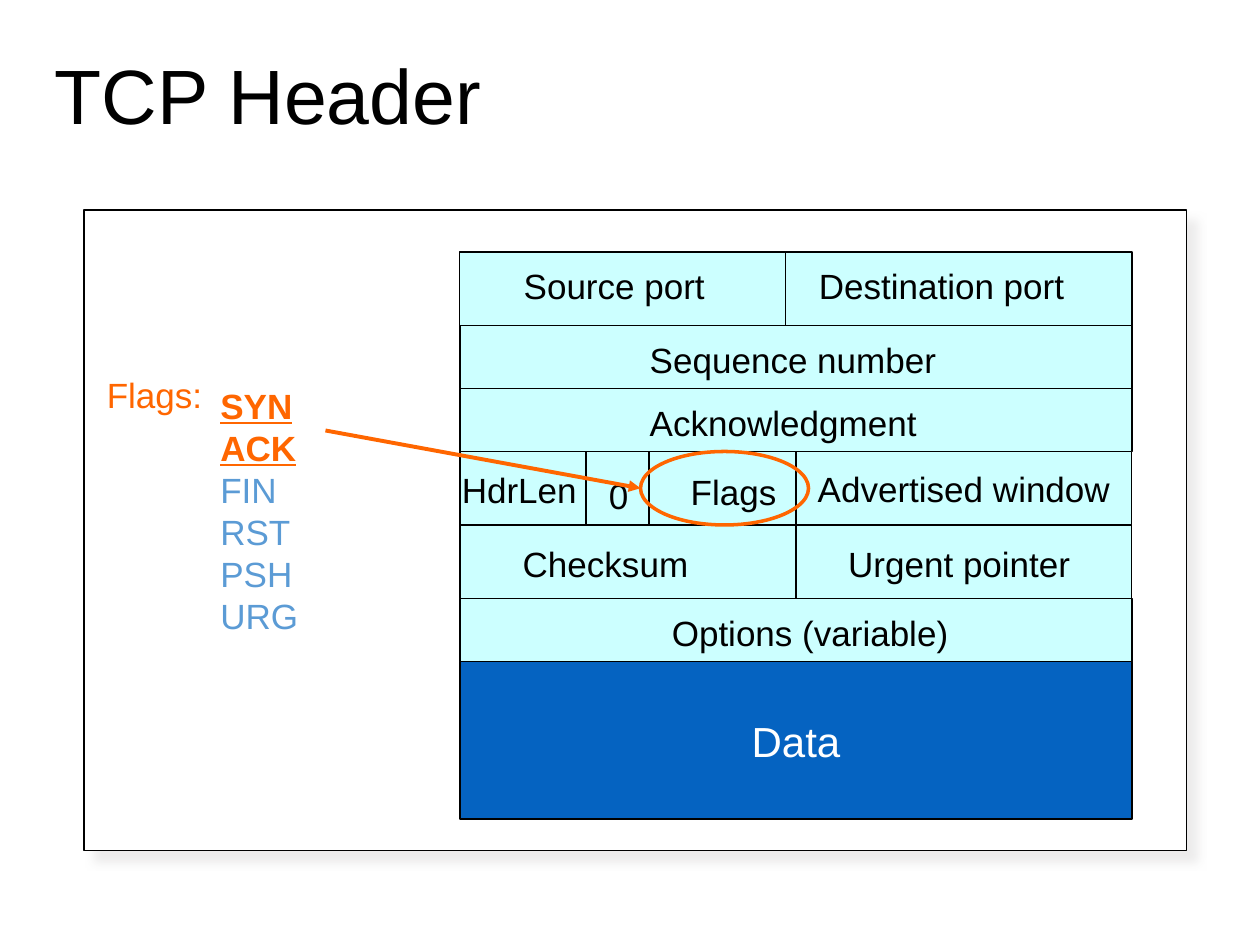
from dataclasses import dataclass
from typing import Optional

from lxml.etree import SubElement
from pptx import Presentation
from pptx.dml.color import RGBColor
from pptx.enum.shapes import MSO_CONNECTOR as Conn, MSO_SHAPE as Geo
from pptx.enum.text import MSO_ANCHOR as Anchor, MSO_AUTO_SIZE as AutoSize, PP_ALIGN as Align
from pptx.oxml.ns import qn
from pptx.util import Emu, Pt

PX = 7620  # EMU per px, 120 px to the inch
BLACK = RGBColor(0x00, 0x00, 0x00)
WHITE = RGBColor(0xFF, 0xFF, 0xFF)
CYAN = RGBColor(0xCC, 0xFF, 0xFF)
BLUE = RGBColor(0x05, 0x63, 0xC1)
ORANGE = RGBColor(0xFF, 0x66, 0x00)
LIGHT_BLUE = RGBColor(0x5B, 0x9B, 0xD5)

LEFT, TOP, LABEL_H = 438, 240, 52


@dataclass(frozen=True)
class Row:
    height: int
    widths: tuple[int, ...] = (640,)
    fill: RGBColor = CYAN


@dataclass(frozen=True)
class Label:
    text: str
    x: int
    y: int
    w: int
    fill: Optional[RGBColor] = CYAN
    color: RGBColor = BLACK


@dataclass(frozen=True)
class Flag:
    name: str
    key: bool = False


ROWS = (
    Row(70, (310, 330)),
    Row(60),
    Row(60),
    Row(70, (320, 320)),
    Row(70, (320, 320)),
    Row(60),
    Row(150, fill=BLUE),
)
LABELS = (
    Label("Source port", 487, 246, 197),
    Label("Destination port", 768, 246, 258),
    Label("Sequence number", 607, 316, 296),
    Label("Acknowledgment", 607, 376, 278),
    Label("Advertised window", 767, 439, 302),
    Label("HdrLen", 428, 440, 140, fill=None),
    Label("Flags", 646, 442, 106),
    Label("0", 568, 446, 43),
    Label("Checksum", 486, 511, 181),
    Label("Urgent pointer", 796, 511, 235),
    Label("Options (variable)", 628, 576, 287),
    Label("Flags:", 90, 350, 115, fill=None, color=ORANGE),
)
FLAGS = (Flag("SYN", True), Flag("ACK", True), Flag("FIN"), Flag("RST"), Flag("PSH"), Flag("URG"))


def px(*lengths: int) -> list[Emu]:
    return [Emu(n * PX) for n in lengths]


def add_run(p, text: str, size: int, color: RGBColor):
    r = p.add_run()
    r.text = text
    r.font.name, r.font.size = "Arial", Pt(size)
    r.font.color.rgb = color
    return r


def add_outline(s, geo, box: tuple[int, ...], fill: Optional[RGBColor],
                color: RGBColor = BLACK, width: float = 0.75):
    sp = s.shapes.add_shape(geo, *px(*box))
    sp.shadow.inherit = False
    if fill is None:
        sp.fill.background()
    else:
        sp.fill.solid()
        sp.fill.fore_color.rgb = fill
    sp.line.color.rgb, sp.line.width = color, Pt(width)
    return sp


def add_line(s, ends: tuple[int, ...], color: RGBColor = BLACK,
             width: float = 0.75, arrow: bool = False) -> None:
    line = s.shapes.add_connector(Conn.STRAIGHT, *px(*ends))
    line.line.color.rgb, line.line.width = color, Pt(width)
    if arrow:
        SubElement(line.line._get_or_add_ln(), qn("a:tailEnd"), type="triangle")
    SubElement(line._element.spPr, qn("a:effectLst"))


def add_text_box(s, box: tuple[int, ...]):
    """Add a box of fixed width, with no right inset so each line has room to spare."""
    sp = s.shapes.add_textbox(*px(*box))
    tf = sp.text_frame
    tf.word_wrap, tf.auto_size, tf.margin_right = True, AutoSize.SHAPE_TO_FIT_TEXT, 0
    return sp


def add_label(s, label: Label) -> None:
    sp = add_text_box(s, (label.x, label.y, label.w, LABEL_H))
    if label.fill is not None:
        sp.fill.solid()
        sp.fill.fore_color.rgb = label.fill
    add_run(sp.text_frame.paragraphs[0], label.text, 20, label.color)


def add_title(s) -> None:
    title = s.shapes.title
    title.left, title.top, title.width, title.height = px(40, 50, 1058, 90)
    title.text_frame.vertical_anchor = Anchor.MIDDLE
    p = title.text_frame.paragraphs[0]
    p.alignment, p.line_spacing = Align.LEFT, 0.9
    add_run(p, "TCP Header", 44, BLACK)


def add_frame(s) -> None:
    """Draw the white panel with its soft shadow to the lower right."""
    sp = add_outline(s, Geo.RECTANGLE, (80, 200, 1050, 610), WHITE)
    effects = sp._element.spPr.find(qn("a:effectLst"))
    shadow = SubElement(effects, qn("a:outerShdw"), blurRad=str(Pt(5)), dist=str(Pt(8.5)),
                        dir="2700000", algn="tl", rotWithShape="0")
    color = SubElement(shadow, qn("a:srgbClr"), val="E7E6E6")
    SubElement(color, qn("a:alpha"), val="75000")


def add_header_rows(s) -> None:
    """Stack the rows downwards; the last one holds the payload."""
    y = TOP
    for row in ROWS:
        x = LEFT
        for w in row.widths:
            cell = add_outline(s, Geo.RECTANGLE, (x, y, w, row.height), row.fill)
            x += w
        y += row.height
    tf = cell.text_frame
    tf.word_wrap, tf.vertical_anchor = False, Anchor.MIDDLE
    p = tf.paragraphs[0]
    p.alignment = Align.CENTER
    add_run(p, "Data", 24, WHITE)


def add_flag_list(s) -> None:
    tf = add_text_box(s, (198, 360, 98, 252)).text_frame
    for i, flag in enumerate(FLAGS):
        p = tf.add_paragraph() if i else tf.paragraphs[0]
        r = add_run(p, flag.name, 20, ORANGE if flag.key else LIGHT_BLUE)
        r.font.bold = r.font.underline = flag.key


def main() -> None:
    prs = Presentation()
    prs.slide_width, prs.slide_height = px(1200, 900)
    s = prs.slides.add_slide(prs.slide_layouts[5])
    add_frame(s)
    add_title(s)
    add_header_rows(s)
    for label in LABELS:
        add_label(s, label)
    for x in (558, 618):
        add_line(s, (x, 430, x, 500))
    add_flag_list(s)
    add_outline(s, Geo.OVAL, (610, 430, 160, 70), None, ORANGE, 2)
    add_line(s, (310, 410, 610, 465), ORANGE, 2.25, arrow=True)
    prs.save("out.pptx")


if __name__ == "__main__":
    main()
